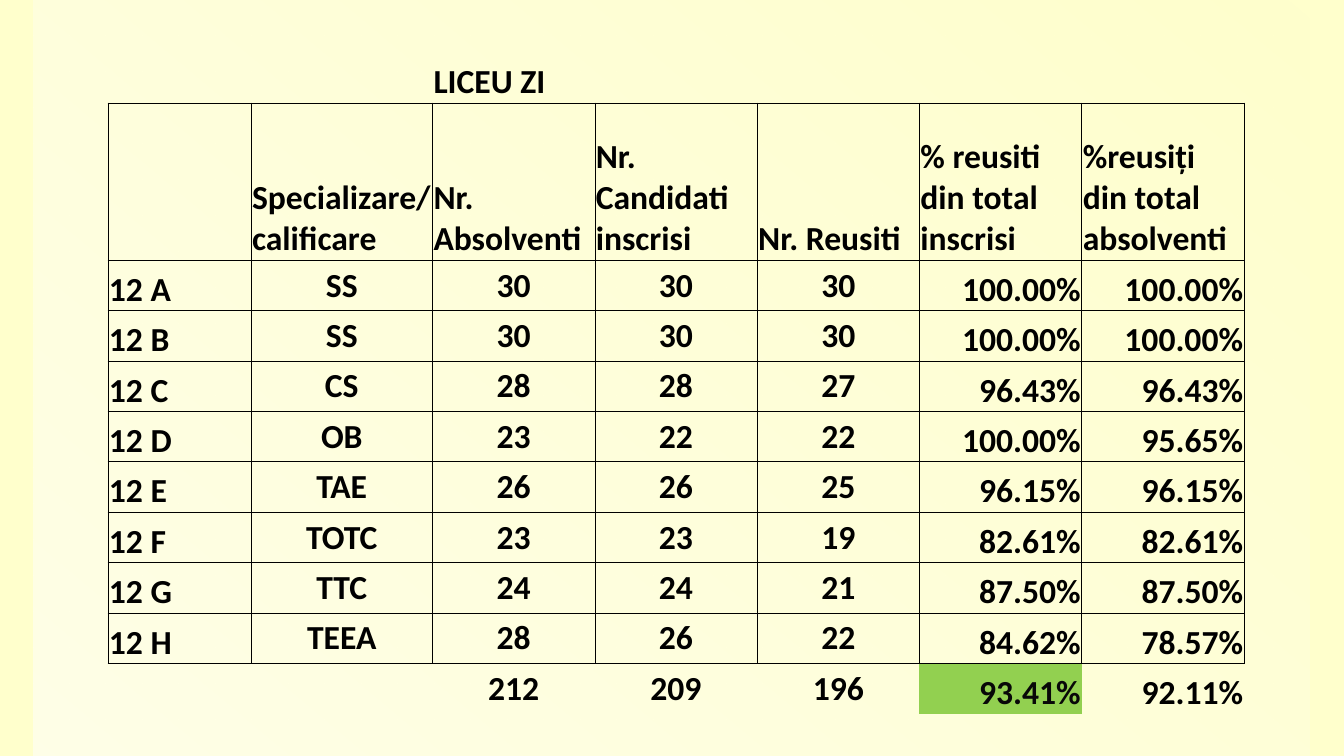
from lxml.etree import SubElement
from pptx import Presentation
from pptx.dml.color import RGBColor
from pptx.enum.shapes import MSO_SHAPE
from pptx.enum.text import MSO_ANCHOR, PP_ALIGN
from pptx.oxml.ns import qn
from pptx.util import Inches, Pt

COLORS = {
    "background": "FFFFCC",
    "panel": "FFFFFF",
    "text": "000000",
    "border": "000000",
    "highlight": "92D050",
    "highlight_text": "080808",
}
NO_STYLE = "{2D5ABB26-0587-4C30-8999-92F81FD0307C}"
COLUMN_WIDTHS = [1.42, 1.8] + [1.61] * 5
ROW_HEIGHTS = [0.5, 1.56] + [0.5] * 9
ROWS = [
    ["", "", "LICEU ZI", "", "", "", ""],
    ["", "Specializare/ calificare", "Nr. Absolventi", "Nr. Candidati inscrisi",
     "Nr. Reusiti", "% reusiti din total inscrisi", "%reusiți din total absolventi"],
    ["12 A", "SS", "30", "30", "30", "100.00%", "100.00%"],
    ["12 B", "SS", "30", "30", "30", "100.00%", "100.00%"],
    ["12 C", "CS", "28", "28", "27", "96.43%", "96.43%"],
    ["12 D", "OB", "23", "22", "22", "100.00%", "95.65%"],
    ["12 E", "TAE", "26", "26", "25", "96.15%", "96.15%"],
    ["12 F", "TOTC", "23", "23", "19", "82.61%", "82.61%"],
    ["12 G", "TTC", "24", "24", "21", "87.50%", "87.50%"],
    ["12 H", "TEEA", "28", "26", "22", "84.62%", "78.57%"],
    ["", "", "212", "209", "196", "93.41%", "92.11%"],
]
LAST_ROW = len(ROWS) - 1


def write_cell(cell, text, align=PP_ALIGN.LEFT, anchor=MSO_ANCHOR.BOTTOM, color="text"):
    cell.margin_left = cell.margin_right = cell.margin_top = Inches(0.01)
    cell.margin_bottom = 0
    cell.vertical_anchor = anchor
    paragraph = cell.text_frame.paragraphs[0]
    paragraph.alignment = align
    run = paragraph.add_run()
    run.text = text
    run.font.name = "Calibri"
    run.font.size = Pt(24)
    run.font.bold = True
    run.font.color.rgb = RGBColor.from_string(COLORS[color])


def add_borders(cell, sides):
    properties = cell._tc.get_or_add_tcPr()
    for side in sides:
        line = SubElement(properties, qn(f"a:ln{side}"), w=str(Pt(0.5)))
        fill = SubElement(line, qn("a:solidFill"))
        SubElement(fill, qn("a:srgbClr"), val=COLORS["border"])


presentation = Presentation()
presentation.slide_width = Inches(13.33)
presentation.slide_height = Inches(7.5)
slide = presentation.slides.add_slide(presentation.slide_layouts[6])
slide.background.fill.solid()
slide.background.fill.fore_color.rgb = RGBColor.from_string(COLORS["background"])

panel = slide.shapes.add_shape(
    MSO_SHAPE.RECTANGLE, Inches(0.33), 0, Inches(12.66), Inches(7.5))
panel.shadow.inherit = False
panel.line.fill.background()
panel.fill.gradient()
panel.fill.gradient_angle = 230
for stop in panel.fill.gradient_stops:
    stop.color.rgb = RGBColor.from_string(COLORS["panel"])
stop_colors = panel.element.spPr.findall(".//" + qn("a:srgbClr"))
for stop_color, opacity in zip(stop_colors, (0, 55)):
    SubElement(stop_color, qn("a:alpha"), val=str(opacity * 1000))

table_frame = slide.shapes.add_table(
    len(ROWS), len(COLUMN_WIDTHS), Inches(1.07), Inches(0.52),
    Inches(sum(COLUMN_WIDTHS)), Inches(sum(ROW_HEIGHTS)))
table = table_frame.table
table.first_row = False
table.horz_banding = False
table_frame.element.find(".//" + qn("a:tableStyleId")).text = NO_STYLE
for column, width in zip(table.columns, COLUMN_WIDTHS):
    column.width = Inches(width)
for row, height in zip(table.rows, ROW_HEIGHTS):
    row.height = Inches(height)

for row_index, texts in enumerate(ROWS):
    sides = {0: "B", LAST_ROW: "T"}.get(row_index, "LRTB")
    for column_index, text in enumerate(texts):
        cell = table.cell(row_index, column_index)
        add_borders(cell, sides)
        highlighted = row_index == LAST_ROW and column_index == 5
        if highlighted:
            cell.fill.solid()
            cell.fill.fore_color.rgb = RGBColor.from_string(COLORS["highlight"])
        else:
            cell.fill.background()
        if not text:
            continue
        if row_index < 2 or column_index == 0:
            write_cell(cell, text)
        elif column_index < 5:
            write_cell(cell, text, align=PP_ALIGN.CENTER, anchor=MSO_ANCHOR.MIDDLE)
        else:
            write_cell(cell, text, align=PP_ALIGN.RIGHT,
                       color="highlight_text" if highlighted else "text")

presentation.save("out.pptx")
